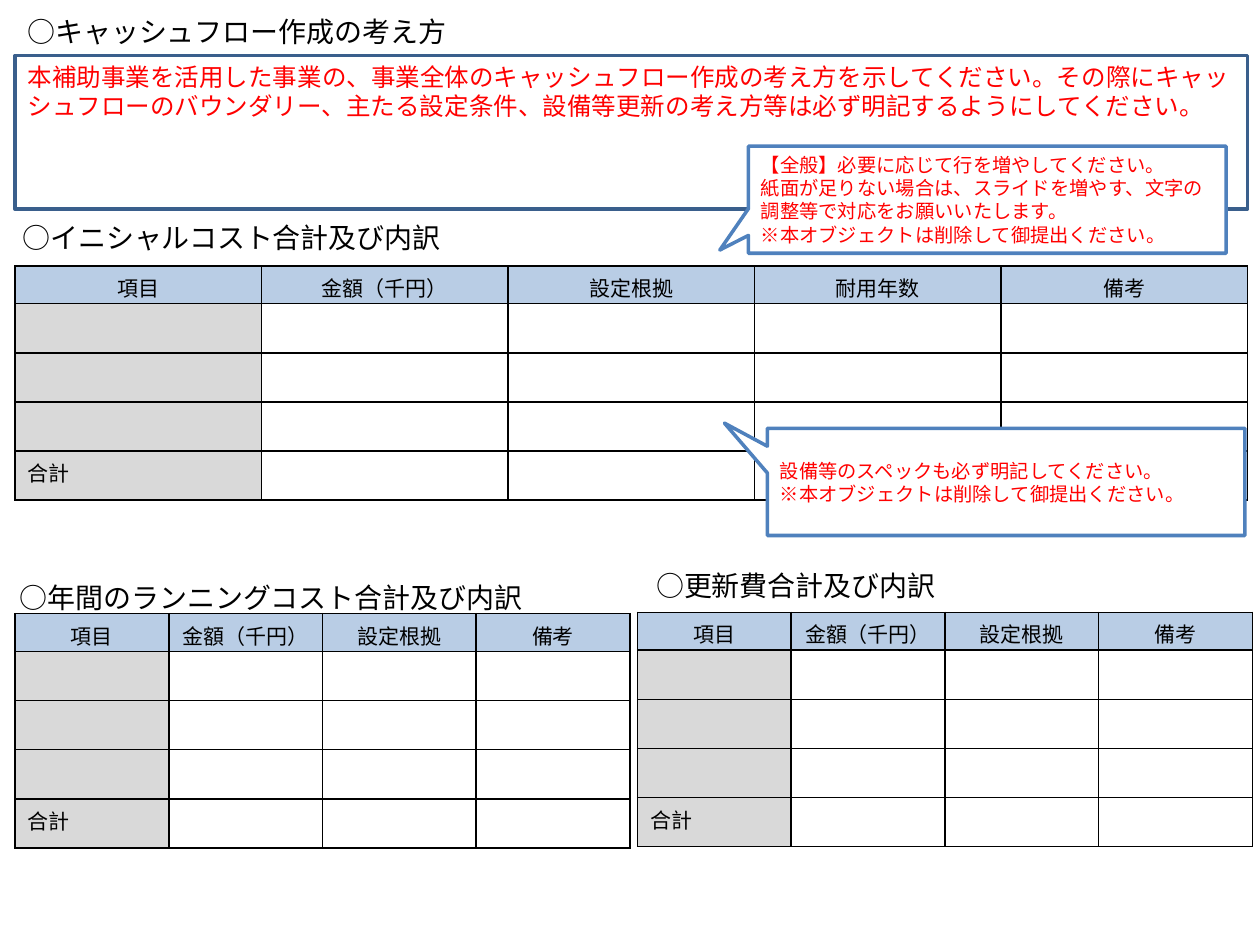
from dataclasses import dataclass

from lxml import etree
from pptx import Presentation
from pptx import util as u
from pptx.dml.color import RGBColor
from pptx.enum import shapes, text
from pptx.oxml.ns import qn
from pptx.slide import Slide

BLACK = RGBColor(0x00, 0x00, 0x00)
WHITE = RGBColor(0xFF, 0xFF, 0xFF)
RED = RGBColor(0xFF, 0x00, 0x00)
NAVY = RGBColor(0x3A, 0x5F, 0x8C)
BLUE = RGBColor(0x4F, 0x81, 0xBD)
HEADER_FILL = RGBColor(0xB9, 0xCD, 0xE5)
ITEM_FILL = RGBColor(0xD9, 0xD9, 0xD9)

DELETE_NOTE = "※本オブジェクトは削除して御提出ください。"


@dataclass
class SlideBuilder:
    s: Slide
    font: str = "Noto Sans CJK JP"
    table_font: str = "Calibri"
    line_width: float = 2
    border_width: float = 1
    header_height: float = 0.23
    row_height: float = 0.39

    def put_text(self, tf, lines, size, color, font=None, **frame):
        for name, value in frame.items():
            setattr(tf, name, value)
        for i, line in enumerate(lines):
            p = tf.paragraphs[0] if i == 0 else tf.add_paragraph()
            p.alignment = text.PP_ALIGN.LEFT
            r = p.add_run()
            r.text = line
            for name, value in {"name": font or self.font, "size": u.Pt(size)}.items():
                setattr(r.font, name, value)
            r.font.color.rgb = color
            if not font:
                ea = etree.SubElement(r._r.get_or_add_rPr(), qn("a:ea"))
                ea.set("typeface", self.font)

    def heading(self, left, top, width, line):
        sp = self.s.shapes.add_textbox(*map(u.Inches, (left, top, width, 0.37)))
        self.put_text(sp.text_frame, [line], 16, BLACK, word_wrap=True,
                      auto_size=text.MSO_AUTO_SIZE.SHAPE_TO_FIT_TEXT)

    def outlined(self, kind, box, line_color):
        sp = self.s.shapes.add_shape(kind, *map(u.Inches, box))
        sp.shadow.inherit = False
        sp.line.color.rgb = line_color
        sp.line.width = u.Pt(self.line_width)
        return sp

    def frame(self, box, line):
        sp = self.outlined(shapes.MSO_SHAPE.RECTANGLE, box, NAVY)
        sp.fill.background()
        self.put_text(sp.text_frame, [line], 14, RED, word_wrap=True,
                      vertical_anchor=text.MSO_ANCHOR.TOP)

    def callout(self, left, top, tip, lines):
        sp = self.outlined(shapes.MSO_SHAPE.RECTANGULAR_CALLOUT,
                           (left, top, 3.79, 0.85), BLUE)
        sp.fill.solid()
        sp.fill.fore_color.rgb = WHITE
        for i, value in enumerate(tip):
            sp.adjustments[i] = value
        self.put_text(sp.text_frame, lines, 11, RED, word_wrap=True,
                      vertical_anchor=text.MSO_ANCHOR.MIDDLE)

    def border(self, cell):
        tc_pr = cell._tc.get_or_add_tcPr()
        for side in ("lnL", "lnR", "lnT", "lnB"):
            ln = etree.SubElement(tc_pr, qn(f"a:{side}"), w=str(u.Pt(self.border_width)))
            fill = etree.SubElement(ln, qn("a:solidFill"))
            etree.SubElement(fill, qn("a:srgbClr"), val=str(BLACK))

    def cost_table(self, left, top, width, headers, items=3):
        rows, cols = items + 2, len(headers)
        height = self.header_height + self.row_height * (rows - 1)
        table = self.s.shapes.add_table(
            rows, cols, *map(u.Inches, (left, top, width, height))).table
        for col in table.columns:
            col.width = u.Inches(width / cols)
        for i, row in enumerate(table.rows):
            row.height = u.Inches(self.row_height if i else self.header_height)
            for j, cell in enumerate(row.cells):
                self.border(cell)
                if i == 0 or j == 0:
                    cell.fill.solid()
                    cell.fill.fore_color.rgb = ITEM_FILL if i else HEADER_FILL
                else:
                    cell.fill.background()
                p = cell.text_frame.paragraphs[0]
                label = headers[j] if i == 0 else "合計" if (i, j) == (rows - 1, 0) else ""
                if label:
                    self.put_text(cell.text_frame, [label], 12, BLACK, self.table_font)
                else:
                    etree.SubElement(p._p, qn("a:endParaRPr"), sz="1200")
                if i == 0:
                    p.alignment = text.PP_ALIGN.CENTER


def main():
    prs = Presentation()
    prs.slide_width, prs.slide_height = u.Inches(10), u.Inches(7.5)
    b = SlideBuilder(prs.slides.add_slide(prs.slide_layouts[6]))
    headers = ["項目", "金額（千円）", "設定根拠", "備考"]

    # Cash flow approach
    b.heading(0.12, 0.07, 4.59, "○キャッシュフロー作成の考え方")
    b.frame((0.12, 0.44, 9.78, 1.22),
            "本補助事業を活用した事業の、事業全体のキャッシュフロー作成の考え方を示してください。"
            "その際にキャッシュフローのバウンダリー、主たる設定条件、設備等更新の考え方等は"
            "必ず明記するようにしてください。")

    # Initial cost
    b.heading(0.08, 1.7, 4.59, "○イニシャルコスト合計及び内訳")
    b.cost_table(0.12, 2.11, 9.78, headers[:3] + ["耐用年数"] + headers[3:])

    # Yearly running cost
    b.heading(0.06, 4.56, 4.59, "○年間のランニングコスト合計及び内訳")
    b.cost_table(0.12, 4.87, 4.88, headers)

    # Renewal cost
    b.heading(5.11, 4.46, 2.86, "○更新費合計及び内訳")
    b.cost_table(5.06, 4.86, 4.88, headers)

    # Instructions on top of the tables
    b.callout(6.09, 3.4, (-0.59, -0.55),
              ["設備等のスペックも必ず明記してください。", DELETE_NOTE])
    b.callout(5.94, 1.16, (-0.56, 0.47),
              ["【全般】必要に応じて行を増やしてください。",
               "紙面が足りない場合は、スライドを増やす、文字の調整等で対応をお願いいたします。",
               DELETE_NOTE])

    prs.save("out.pptx")


if __name__ == "__main__":
    main()
